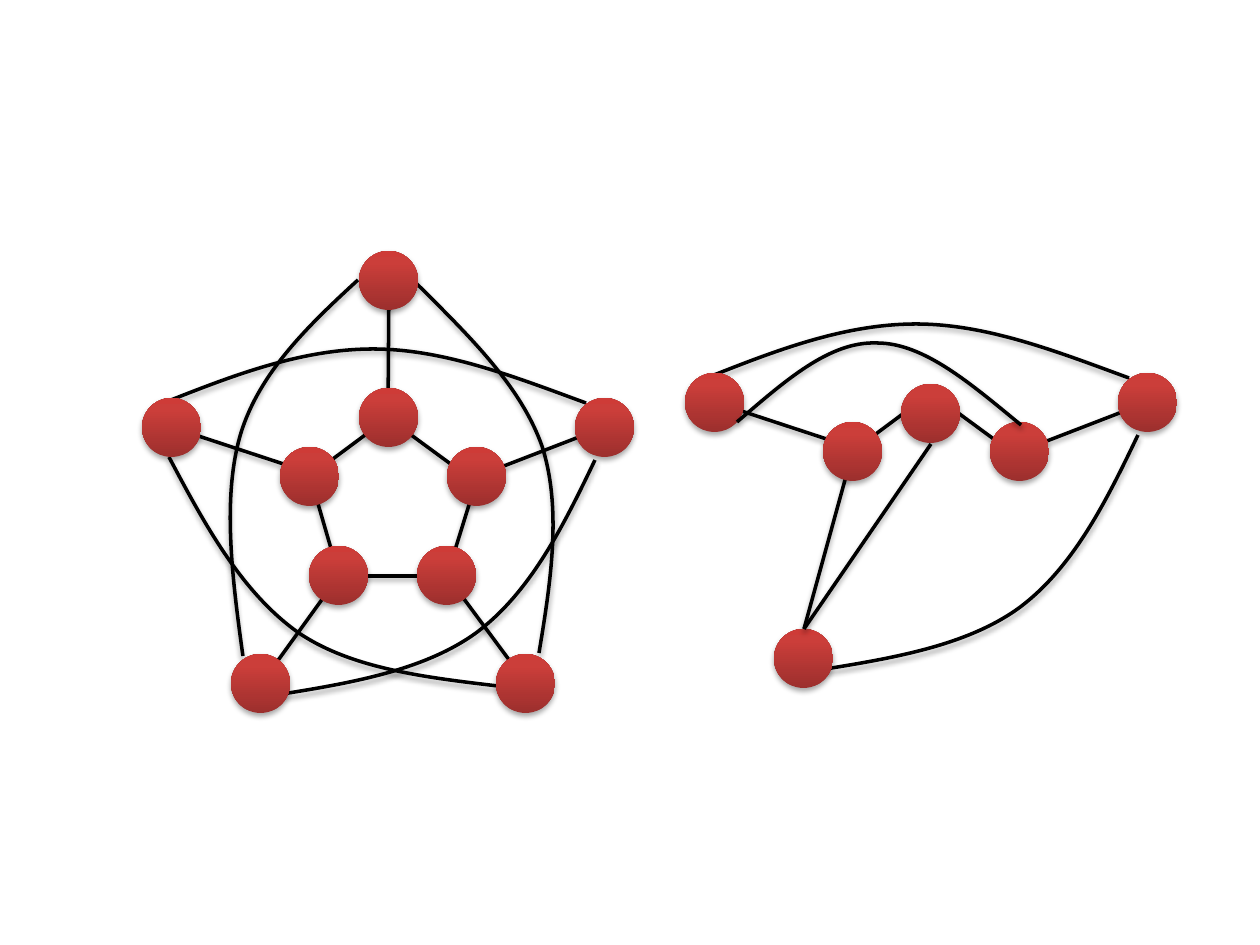
from lxml import etree
from pptx import Presentation
from pptx.dml.color import RGBColor
from pptx.enum.shapes import MSO_CONNECTOR, MSO_SHAPE
from pptx.oxml.ns import qn
from pptx.util import Pt

PX = 914400 / 126
STRAIGHT = MSO_CONNECTOR.STRAIGHT
OVAL = MSO_SHAPE.OVAL
NODE_SIZE = 59
NODE_STOPS = [(0, "9C2F2D"), (80000, "CB3E3A"), (100000, "CE3B37")]


def add_shadow(shape):
    """Append the soft downward shadow; the line must already be set."""
    effects = etree.SubElement(shape._element.spPr, qn("a:effectLst"))
    shadow = etree.SubElement(effects, qn("a:outerShdw"), blurRad="40000",
                              dist="23000", dir="5400000", rotWithShape="0")
    color = etree.SubElement(shadow, qn("a:srgbClr"), val="000000")
    etree.SubElement(color, qn("a:alpha"), val="35000")


def style_edge(shape):
    shape.line.color.rgb = RGBColor.from_string("000000")
    shape.line.width = Pt(2)
    add_shadow(shape)


# Each curve is a start point followed by two cubic segments of three points.
top_arc = [(166, 402), (234, 375), (302, 349), (373, 349),
           (444, 349), (515, 377), (586, 403)]
right_arc = [(595, 460), (563, 527), (530, 593), (476, 633),
             (422, 672), (345, 684), (270, 696)]
left_arc = [(169, 457), (205, 525), (242, 593), (299, 633),
            (354, 670), (431, 678), (507, 687)]
upper_left_arc = [(358, 280), (309, 325), (260, 372), (241, 433),
                  (222, 496), (232, 577), (243, 656)]
upper_right_arc = [(413, 280), (466, 333), (520, 384), (542, 446),
                   (562, 508), (551, 581), (539, 653)]
inner_arc = [(194, 447), (241, 407), (286, 366), (334, 368),
             (381, 368), (428, 409), (478, 450)]

# Edges and nodes that both graphs share, at the left graph's position.
shared_edges = [
    [(171, 427), (320, 476)], [(478, 476), (605, 427)],
    [(388, 418), (467, 476)], [(388, 418), (310, 476)],
]
inner_sides = [(447, 447), (280, 447)]
outer_left, outer_right, bottom_left = (142, 398), (575, 398), (231, 654)

# Offset, then layers from back to front: edges, nodes, curves, nodes.
petersen = (0, 0), [
    ("edge", shared_edges + [
        [(339, 576), (261, 684)], [(447, 576), (527, 684)],
        [(389, 280), (388, 418)], [(310, 476), (339, 576)],
        [(339, 576), (447, 576)], [(478, 476), (447, 576)]]),
    ("node", [(359, 388)] + inner_sides + [(417, 546), (309, 546)]),
    ("curve", [upper_left_arc, upper_right_arc, top_arc, right_arc, left_arc]),
    ("node", [outer_left, bottom_left, (359, 251), (496, 654), outer_right]),
]
subgraph = (543, -25), [
    ("edge", shared_edges + [[(310, 476), (261, 654)]]),
    ("node", [(358, 409)] + inner_sides),
    ("curve", [top_arc, right_arc]),
    ("node", [outer_left, bottom_left, outer_right]),
    ("edge", [[(388, 469), (261, 654)]]),
    ("curve", [inner_arc]),
]

presentation = Presentation()
presentation.slide_width = round(1260 * PX)
presentation.slide_height = round(945 * PX)
slide = presentation.slides.add_slide(presentation.slide_layouts[6])
shapes = slide.shapes

for (shift_x, shift_y), layers in (petersen, subgraph):
    for kind, items in layers:
        for item in items:
            points = [item] if kind == "node" else item
            points = [(x + shift_x, y + shift_y) for x, y in points]
            if kind == "edge":
                ends = [round(value * PX) for point in points for value in point]
                style_edge(shapes.add_connector(STRAIGHT, *ends))
            elif kind == "node":
                left, top = points[0]
                node = shapes.add_shape(OVAL, round(left * PX), round(top * PX),
                                        round(NODE_SIZE * PX), round(NODE_SIZE * PX))
                node.fill.gradient()
                node.fill.gradient_angle = 90
                stops = node._element.spPr.find(".//" + qn("a:gsLst"))
                stops.clear()
                for position, color in NODE_STOPS:
                    stop = etree.SubElement(stops, qn("a:gs"), pos=str(position))
                    etree.SubElement(stop, qn("a:srgbClr"), val=color)
                node.line.fill.background()
                add_shadow(node)
            else:
                builder = shapes.build_freeform(*points[0], scale=PX)
                builder.add_line_segments(points[1:], close=False)
                curve = builder.convert_to_shape()
                segments = curve._element.spPr.findall(".//" + qn("a:lnTo"))
                outline = segments[0].getparent()
                for first in range(0, len(segments), 3):
                    bezier = etree.SubElement(outline, qn("a:cubicBezTo"))
                    for segment in segments[first:first + 3]:
                        bezier.append(segment[0])
                        outline.remove(segment)
                curve.fill.background()
                style_edge(curve)

presentation.save("out.pptx")
